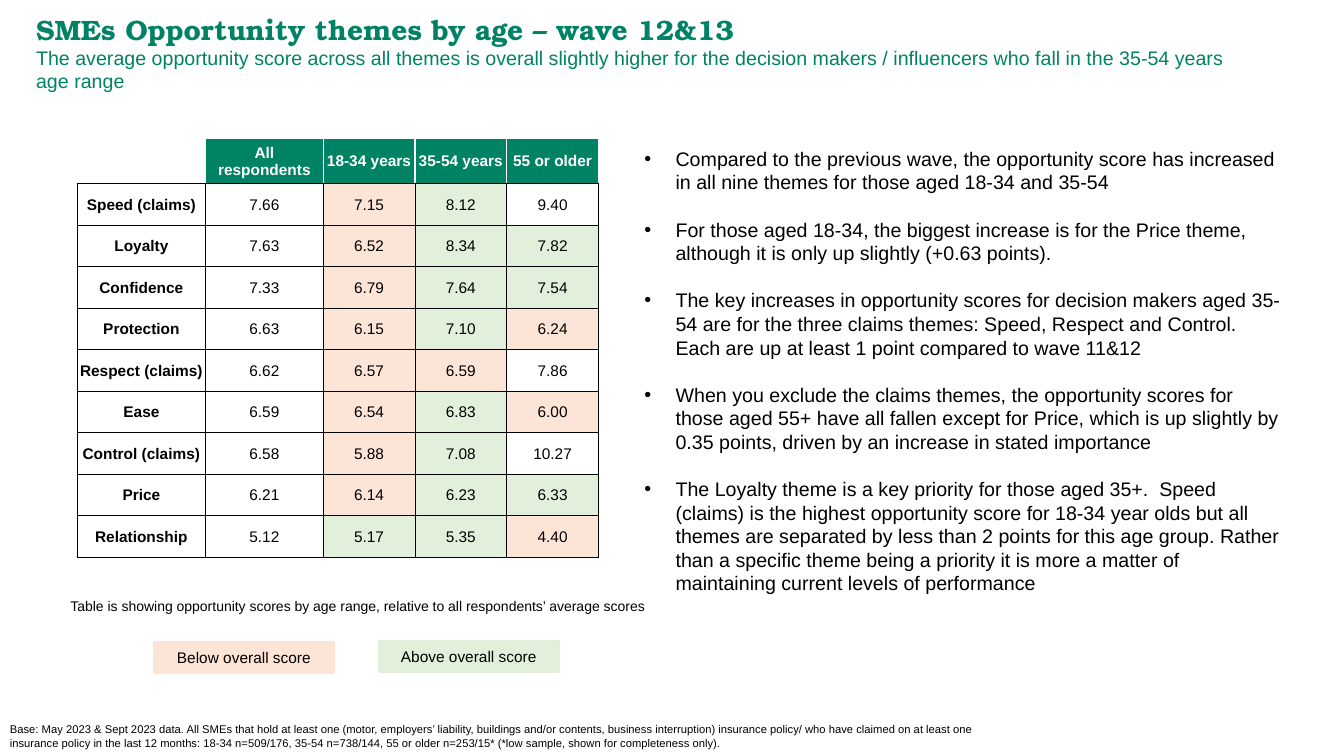
"""Build a slide on SME opportunity themes by age group."""
from dataclasses import dataclass
from typing import Any, Optional

from lxml.etree import SubElement
from pptx import Presentation
from pptx.dml.color import RGBColor
from pptx.enum.shapes import MSO_SHAPE
from pptx.enum.text import MSO_ANCHOR, PP_ALIGN
from pptx.oxml.ns import qn
from pptx.util import Inches, Pt

WIDTH, HEIGHT = 13.33, 7.5


@dataclass(frozen=True)
class Theme:
    green: str = "008265"
    black: str = "000000"
    white: str = "FFFFFF"
    below: str = "FCE4D6"
    above: str = "E2EFDA"
    body_font: str = "Arial"
    title_font: str = "TeX Gyre Bonum"
    title_size: int = 20
    text_size: int = 14
    table_size: int = 11
    caption_size: int = 10
    base_size: int = 8


THEME = Theme()


@dataclass(frozen=True)
class Area:
    """Position and size in percent of the slide's width and height."""
    left: float
    top: float
    width: float
    height: float


@dataclass(frozen=True)
class Line:
    text: str
    size: int
    color: str = THEME.black
    bold: bool = False
    font: str = THEME.body_font
    align: PP_ALIGN = PP_ALIGN.LEFT
    bullet: bool = False
    gap: int = 0


@dataclass(frozen=True)
class TextBox:
    area: Area
    lines: list[Line]
    inset: tuple[float, float] = (0.1, 0.05)


@dataclass(frozen=True)
class Key:
    area: Area
    label: str
    color: str


@dataclass(frozen=True)
class ThemeRow:
    name: str
    scores: tuple[float, float, float, float]


HEADERS = ["", "All respondents", "18-34 years", "35-54 years", "55 or older"]
THEME_ROWS = [
    ThemeRow("Speed (claims)", (7.66, 7.15, 8.12, 9.40)),
    ThemeRow("Loyalty", (7.63, 6.52, 8.34, 7.82)),
    ThemeRow("Confidence", (7.33, 6.79, 7.64, 7.54)),
    ThemeRow("Protection", (6.63, 6.15, 7.10, 6.24)),
    ThemeRow("Respect (claims)", (6.62, 6.57, 6.59, 7.86)),
    ThemeRow("Ease", (6.59, 6.54, 6.83, 6.00)),
    ThemeRow("Control (claims)", (6.58, 5.88, 7.08, 10.27)),
    ThemeRow("Price", (6.21, 6.14, 6.23, 6.33)),
    ThemeRow("Relationship", (5.12, 5.17, 5.35, 4.40)),
]
TABLE_LEFT, TABLE_TOP = 5.75, 18.3
COLUMN_WIDTHS = [9.55, 8.75, 6.83, 6.83, 6.83]
ROW_HEIGHTS = [6.0] + [5.49] * len(THEME_ROWS)

FINDINGS = [
    "Compared to the previous wave, the opportunity score has increased in all nine themes for those aged 18-34 and 35-54",
    "For those aged 18-34, the biggest increase is for the Price theme, although it is only up slightly (+0.63 points).",
    "The key increases in opportunity scores for decision makers aged 35-54 are for the three claims themes: Speed, Respect and Control.  Each are up at least 1 point compared to wave 11&12",
    "When you exclude the claims themes, the opportunity scores for those aged 55+ have all fallen except for Price, which is up slightly by 0.35 points, driven by an increase in stated importance",
    "The Loyalty theme is a key priority for those aged 35+.  Speed (claims) is the highest opportunity score for 18-34 year olds but all themes are separated by less than 2 points for this age group. Rather than a specific theme being a priority it is more a matter of maintaining current levels of performance",
]
TEXT_BOXES = [
    TextBox(Area(47.94, 19.4, 47.56, 65.5),
            [Line(text, THEME.text_size, bullet=True, gap=17 if index else 0)
             for index, text in enumerate(FINDINGS)], (0, 0)),
    TextBox(Area(1.95, 0.93, 92.12, 12.13), [
        Line("SMEs Opportunity themes by age – wave 12&13", THEME.title_size, THEME.green, True, THEME.title_font),
        Line("The average opportunity score across all themes is overall slightly higher for the decision makers / influencers who fall in the 35-54 years age range", THEME.text_size, THEME.green),
    ]),
    TextBox(Area(4.5, 78.4, 44.71, 8.13), [
        Line("Table is showing opportunity scores by age range, relative to all respondents’ average scores", THEME.caption_size)]),
    TextBox(Area(0, 94.93, 75.09, 5.07), [
        Line("Base: May 2023 & Sept 2023 data. All SMEs that hold at least one (motor, employers’ liability, buildings and/or contents, business interruption) insurance policy/ who have claimed on at least one insurance policy in the last 12 months: 18-34 n=509/176, 35-54 n=738/144, 55 or older n=253/15* (*low sample, shown for completeness only).", THEME.base_size)]),
]
KEYS = [
    Key(Area(11.48, 84.93, 13.35, 4), "Below overall score", THEME.below),
    Key(Area(28.21, 84.8, 13.35, 4), "Above overall score", THEME.above),
]


def across(share: float) -> int:
    return Inches(WIDTH * share / 100)


def down(share: float) -> int:
    return Inches(HEIGHT * share / 100)


def place(area: Area) -> tuple[int, int, int, int]:
    return across(area.left), down(area.top), across(area.width), down(area.height)


def apply(target: Any, formats: dict[str, Any]) -> None:
    for name, value in formats.items():
        setattr(target, name, value)


def write(frame: Any, lines: list[Line]) -> None:
    for index, line in enumerate(lines):
        para = frame.add_paragraph() if index else frame.paragraphs[0]
        if line.bullet:
            properties = para._p.get_or_add_pPr()
            properties.set("marL", str(Inches(0.31)))
            properties.set("indent", str(-Inches(0.31)))
            SubElement(properties, qn("a:buFont"), typeface=THEME.body_font)
            SubElement(properties, qn("a:buChar"), char="•")
        apply(para, {"alignment": line.align, "space_before": Pt(line.gap)})
        span = para.add_run()
        span.text = line.text
        apply(span.font, {"name": line.font, "size": Pt(line.size), "bold": line.bold})
        span.font.color.rgb = RGBColor.from_string(line.color)


def draw_text(page: Any, item: TextBox) -> None:
    frame = page.shapes.add_textbox(*place(item.area)).text_frame
    side, edge = map(Inches, item.inset)
    apply(frame, {"word_wrap": True, "margin_left": side, "margin_right": side,
                  "margin_top": edge, "margin_bottom": edge})
    write(frame, item.lines)


def draw_key(page: Any, key: Key) -> None:
    box = page.shapes.add_shape(MSO_SHAPE.RECTANGLE, *place(key.area))
    box.shadow.inherit = False
    for fill in (box.fill, box.line.fill):
        fill.solid()
        fill.fore_color.rgb = RGBColor.from_string(key.color)
    box.line.width = Pt(2)
    apply(box.text_frame, {"word_wrap": True, "vertical_anchor": MSO_ANCHOR.MIDDLE})
    write(box.text_frame, [Line(key.label, THEME.table_size, align=PP_ALIGN.CENTER)])


def cell_fill(row: int, column: int) -> Optional[str]:
    """Shade scores against all respondents, except low-sample claims scores."""
    if row == 0:
        return THEME.green if column else None
    if column < 2:
        return THEME.white
    theme_row = THEME_ROWS[row - 1]
    if column == 4 and "(claims)" in theme_row.name:
        return None
    return THEME.above if theme_row.scores[column - 1] > theme_row.scores[0] else THEME.below


def draw_cell(cell: Any, text: str, row: int, column: int) -> None:
    apply(cell, {"vertical_anchor": MSO_ANCHOR.MIDDLE, "margin_left": Inches(0.01),
                 "margin_right": Inches(0.01), "margin_top": Inches(0.01), "margin_bottom": 0})
    for side in "LRTB":
        color, width = (THEME.white, 1) if row == 0 and side != "B" else (THEME.black, 0.5)
        border = SubElement(cell._tc.get_or_add_tcPr(), qn(f"a:ln{side}"), w=str(Pt(width)))
        SubElement(SubElement(border, qn("a:solidFill")), qn("a:srgbClr"), val=color)
    shade = cell_fill(row, column)
    if shade:
        cell.fill.solid()
        cell.fill.fore_color.rgb = RGBColor.from_string(shade)
    else:
        cell.fill.background()
    if text:
        color = THEME.black if row else THEME.white
        write(cell.text_frame, [Line(text, THEME.table_size, color, row == 0 or column == 0, align=PP_ALIGN.CENTER)])


def draw_table(page: Any) -> None:
    area = Area(TABLE_LEFT, TABLE_TOP, sum(COLUMN_WIDTHS), sum(ROW_HEIGHTS))
    table = page.shapes.add_table(len(ROW_HEIGHTS), len(COLUMN_WIDTHS), *place(area)).table
    apply(table, {"first_row": False, "horz_banding": False})
    for column, width in zip(table.columns, COLUMN_WIDTHS):
        column.width = across(width)
    for row, height in zip(table.rows, ROW_HEIGHTS):
        row.height = down(height)
    texts = [HEADERS] + [[item.name, *(f"{score:.2f}" for score in item.scores)] for item in THEME_ROWS]
    for row, values in enumerate(texts):
        for column, text in enumerate(values):
            draw_cell(table.cell(row, column), text, row, column)


def main() -> None:
    deck = Presentation()
    apply(deck, {"slide_width": Inches(WIDTH), "slide_height": Inches(HEIGHT)})
    page = deck.slides.add_slide(deck.slide_layouts[6])
    for item in TEXT_BOXES:
        draw_text(page, item)
    draw_table(page)
    for key in KEYS:
        draw_key(page, key)
    deck.save("out.pptx")


if __name__ == "__main__":
    main()
